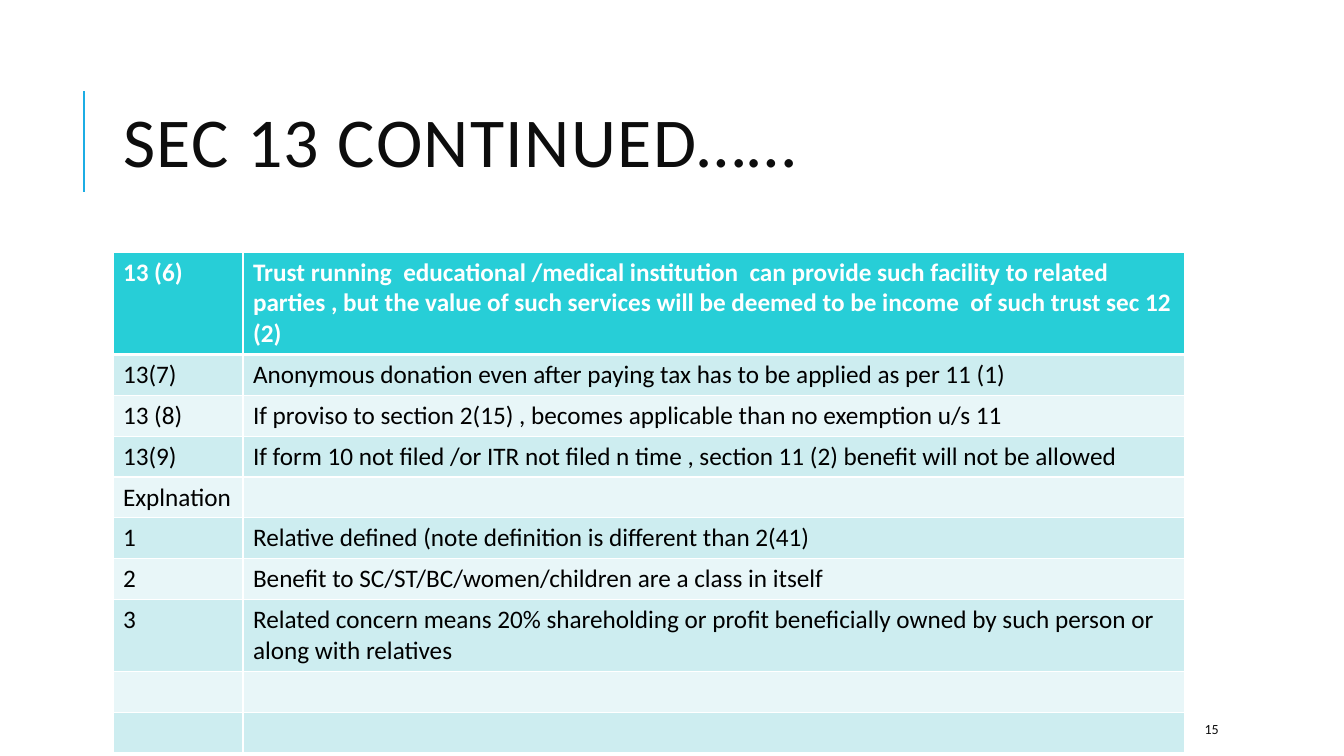
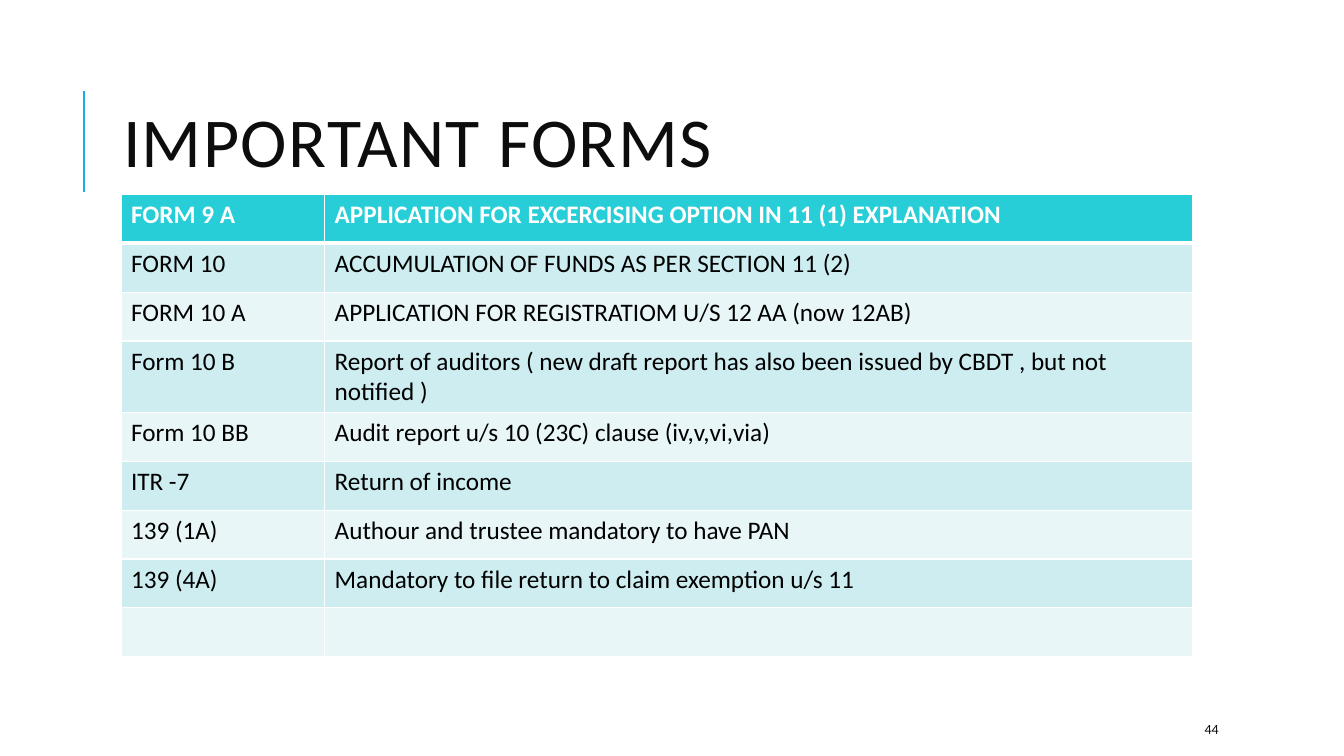
from dataclasses import dataclass

from lxml.etree import SubElement
from pptx import Presentation
from pptx.dml.color import RGBColor
from pptx.enum.shapes import MSO_CONNECTOR
from pptx.enum.text import MSO_ANCHOR, MSO_AUTO_SIZE, PP_ALIGN
from pptx.oxml.ns import qn
from pptx.slide import Slide
from pptx.table import _Cell
from pptx.util import Inches, Pt

FONT = "Calibri"
INK = "0D0D0D"
BLACK = "000000"
WHITE = "FFFFFF"
ACCENT = "1CADE4"
HEADER = "27CED7"
BANDS = ("CDEDF0", "E8F6F8")


@dataclass
class TableSlide:
    """Content and table geometry of one slide, in inches."""

    title: str
    number: str
    left: float
    top: float
    columns: tuple[float, float]
    height: float
    rows: list[tuple[str, str]]


SLIDES = [
    TableSlide("SEC 13 CONTINUED……", "15", 1.12, 2.5, (1.29, 9.34), 4.05, [
        ("13 (6)", "Trust running  educational /medical institution  can provide such facility "
                   "to related parties , but the value of such services will be deemed to be "
                   "income  of such trust sec 12 (2)"),
        ("13(7)", "Anonymous donation even after paying tax has to be applied as per 11 (1)"),
        ("13 (8)", "If proviso to section 2(15) , becomes applicable than no exemption u/s 11"),
        ("13(9)", "If form 10 not filed /or ITR not filed n time , section 11 (2) benefit "
                  "will not be allowed"),
        ("Explnation", ""),
        ("1", "Relative defined (note definition is different than 2(41)"),
        ("2", "Benefit to SC/ST/BC/women/children are a class in itself"),
        ("3", "Related concern means 20% shareholding or profit beneficially owned by such "
              "person or along with relatives"),
        ("", ""),
        ("", ""),
    ]),
    TableSlide("IMPORTANT FORMS", "44", 1.2, 1.93, (2.02, 8.61), 4.36, [
        ("FORM 9 A", "APPLICATION FOR EXCERCISING OPTION IN 11 (1) EXPLANATION"),
        ("FORM 10", "ACCUMULATION OF FUNDS AS PER SECTION 11 (2)"),
        ("FORM 10 A", "APPLICATION FOR REGISTRATIOM U/S 12 AA (now 12AB)"),
        ("Form 10 B", "Report of auditors ( new draft report has also been issued by CBDT , "
                      "but not notified )"),
        ("Form 10 BB", "Audit report u/s 10 (23C) clause (iv,v,vi,via)"),
        ("ITR -7", "Return of income"),
        ("139 (1A)", "Authour and trustee mandatory to have PAN"),
        ("139 (4A)", "Mandatory to file return to claim exemption u/s 11"),
        ("", ""),
    ]),
]


def rgb(value: str) -> RGBColor:
    """Turn a hex string into a colour."""
    return RGBColor.from_string(value)


def write_text(text_frame, text: str, *, size: float, color: str, bold: bool = False,
               line_spacing: float | None = None, tracking: float = 0) -> None:
    """Write one formatted, left-aligned paragraph."""
    paragraph = text_frame.paragraphs[0]
    paragraph.alignment = PP_ALIGN.LEFT
    paragraph.line_spacing = line_spacing
    run = paragraph.add_run()
    run.text = text
    run.font.name = FONT
    run.font.size = Pt(size)
    run.font.bold = bold
    run.font.color.rgb = rgb(color)
    if tracking:
        run.font._element.set("spc", str(round(tracking * 100)))


def add_accent_line(slide: Slide) -> None:
    """Draw the vertical line left of the title."""
    line = slide.shapes.add_connector(
        MSO_CONNECTOR.STRAIGHT, Inches(0.83), Inches(1.9), Inches(0.83), Inches(0.9))
    line.line.color.rgb = rgb(ACCENT)
    line.line.width = Pt(1.5)
    SubElement(line.element.spPr, qn("a:effectLst"))


def set_title(slide: Slide, text: str) -> None:
    """Place and fill the title placeholder."""
    title = slide.shapes.title
    title.left, title.top = Inches(1.12), Inches(0.64)
    title.width, title.height = Inches(10.63), Inches(1.64)
    title.text_frame.auto_size = MSO_AUTO_SIZE.NONE
    title.text_frame.vertical_anchor = MSO_ANCHOR.MIDDLE
    write_text(title.text_frame, text, size=50, color=INK, line_spacing=0.8, tracking=1)


def set_borders(cell: _Cell, *, top: float, bottom: float) -> None:
    """Give a cell white borders, with widths in points."""
    properties = cell._tc.get_or_add_tcPr()
    for side, width in (("L", 1), ("R", 1), ("T", top), ("B", bottom)):
        border = SubElement(properties, qn(f"a:ln{side}"), w=str(Pt(width)))
        fill = SubElement(border, qn("a:solidFill"))
        SubElement(fill, qn("a:srgbClr"), val=WHITE)


def add_banded_table(slide: Slide, content: TableSlide) -> None:
    """Draw the table with a header row and alternating bands."""
    frame = slide.shapes.add_table(
        len(content.rows), len(content.columns), Inches(content.left), Inches(content.top),
        Inches(sum(content.columns)), Inches(content.height))
    table = frame.table
    for column, width in zip(table.columns, content.columns):
        column.width = Inches(width)
    for row_index, texts in enumerate(content.rows):
        is_header = row_index == 0
        for column_index, text in enumerate(texts):
            cell = table.cell(row_index, column_index)
            set_borders(cell, top=3 if row_index == 1 else 1, bottom=3 if is_header else 1)
            cell.fill.solid()
            cell.fill.fore_color.rgb = rgb(HEADER if is_header else BANDS[(row_index - 1) % 2])
            if text:
                write_text(cell.text_frame, text, size=18, bold=is_header,
                           color=WHITE if is_header else BLACK)


def add_page_number(slide: Slide, number: str) -> None:
    """Write the page number at the bottom right."""
    box = slide.shapes.add_textbox(Inches(11.85), Inches(7.08), Inches(1.06), Inches(0.3))
    box.text_frame.word_wrap = True
    box.text_frame.vertical_anchor = MSO_ANCHOR.MIDDLE
    write_text(box.text_frame, number, size=10, color=INK)


def main() -> None:
    """Build and save the presentation."""
    presentation = Presentation()
    presentation.slide_width, presentation.slide_height = Inches(13.33), Inches(7.5)
    title_only = presentation.slide_layouts.get_by_name("Title Only")
    for content in SLIDES:
        slide = presentation.slides.add_slide(title_only)
        add_accent_line(slide)
        set_title(slide, content.title)
        add_banded_table(slide, content)
        add_page_number(slide, content.number)
    presentation.save("out.pptx")


if __name__ == "__main__":
    main()
